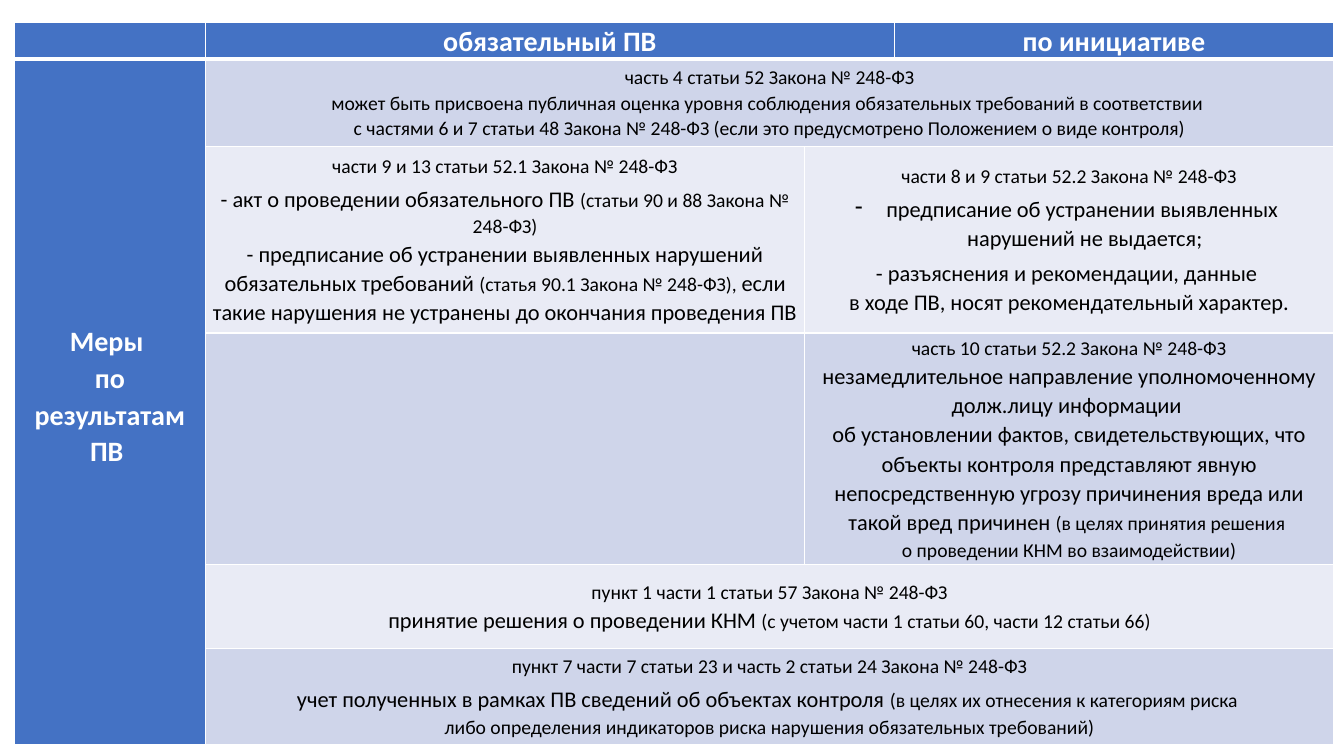
from lxml.etree import SubElement
from pptx import Presentation
from pptx.dml.color import RGBColor
from pptx.enum.text import MSO_ANCHOR, PP_ALIGN
from pptx.oxml.ns import qn
from pptx.util import Inches, Pt

COLORS = {"head": "4472C4", "dark": "CFD5EA", "light": "E9EBF5",
          "white": "FFFFFF", "black": "000000"}
SMALL, BODY, HEADING = 14, 16, 20

# Percent of the slide's width and height
COLUMNS = [14.25, 44.56, 6.68, 32.71]
ROWS = [4.8, 11.6, 24.67, 30.67, 11.07, 12.67]
BANDS = ["head", "dark", "light", "dark", "light", "dark"]


def para(*runs, gap=0, dash=False):
    """Describe a paragraph: (text, size) runs, points above it, dash bullet."""
    return {"runs": runs, "gap": gap, "dash": dash}


# (row, column, rows spanned, columns spanned, paragraphs)
CONTENT = [
    (0, 1, 1, 2, [para(("обязательный ПВ", HEADING))]),
    (0, 3, 1, 1, [para(("по инициативе", HEADING))]),
    (1, 0, 5, 1, [para(("Меры ", HEADING)),
                  para(("по результатам ПВ ", HEADING))]),
    (1, 1, 1, 3, [
        para(("часть 4 статьи 52 Закона № 248-ФЗ", SMALL)),
        para(("может быть присвоена публичная оценка уровня соблюдения "
              "обязательных требований в соответствии ", SMALL)),
        para(("с частями 6 и 7 статьи 48 Закона № 248-ФЗ (если это "
              "предусмотрено Положением о виде контроля)", SMALL))]),
    (2, 1, 1, 1, [
        para(("части 9 и 13 статьи 52.1 Закона № 248-ФЗ", SMALL)),
        para(("- акт о проведении обязательного ПВ ", BODY),
             ("(статьи 90 и 88 Закона № 248-ФЗ)", SMALL), gap=4),
        para(("- предписание об устранении выявленных нарушений "
              "обязательных требований ", BODY),
             ("(статья 90.1 Закона № 248-ФЗ), ", SMALL),
             ("если такие нарушения не устранены до окончания "
              "проведения ПВ", BODY))]),
    (2, 2, 1, 2, [
        para(("части 8 и 9 статьи 52.2 Закона № 248-ФЗ", SMALL)),
        para(("предписание об устранении выявленных \n"
              "нарушений не выдается;", BODY), gap=4, dash=True),
        para(("- разъяснения и рекомендации, данные \n"
              "в ходе ПВ, носят рекомендательный характер.", BODY), gap=4)]),
    (3, 2, 1, 2, [
        para(("часть 10 статьи 52.2 Закона № 248-ФЗ", SMALL)),
        para(("незамедлительное направление уполномоченному долж.лицу "
              "информации \nоб установлении фактов, свидетельствующих, что "
              "объекты контроля представляют явную непосредственную угрозу "
              "причинения вреда или такой вред причинен ", BODY),
             ("(в целях принятия решения \n"
              "о проведении КНМ во взаимодействии)", SMALL))]),
    (4, 1, 1, 3, [
        para(("пункт 1 части 1 статьи 57 Закона № 248-ФЗ", SMALL)),
        para(("принятие решения о проведении КНМ ", BODY),
             ("(с учетом части 1 статьи 60, части 12 статьи 66)", SMALL))]),
    (5, 1, 1, 3, [
        para(("пункт 7 части 7 статьи 23 и часть 2 статьи 24 "
              "Закона № 248-ФЗ", SMALL)),
        para(("учет полученных в рамках ПВ сведений об объектах контроля ",
              BODY),
             ("(в целях их отнесения к категориям риска \nлибо определения "
              "индикаторов риска нарушения обязательных требований)", SMALL),
             gap=4)]),
]


class SlideBuilder:
    def __init__(self, presentation, font):
        self.width = presentation.slide_width
        self.height = presentation.slide_height
        self.font = font
        self.slide = presentation.slides.add_slide(
            presentation.slide_layouts[6])

    def across(self, percent):
        return int(self.width * percent / 100)

    def down(self, percent):
        return int(self.height * percent / 100)

    def table(self, left, top, columns, rows):
        grid = self.slide.shapes.add_table(
            len(rows), len(columns), self.across(left), self.down(top),
            self.across(sum(columns)), self.down(sum(rows))).table
        grid.first_row = grid.horz_banding = False
        for column, share in zip(grid.columns, columns):
            column.width = self.across(share)
        for row, share in zip(grid.rows, rows):
            row.height = self.down(share)
        return grid

    def cell_style(self, cell, fill, top=1, bottom=1):
        """Set margins, white borders (widths in points) and fill."""
        cell.margin_left = cell.margin_right = Inches(0.03)
        cell.margin_top = cell.margin_bottom = 0
        cell.vertical_anchor = MSO_ANCHOR.MIDDLE
        properties = cell._tc.get_or_add_tcPr()
        for side, width in (("L", 1), ("R", 1), ("T", top), ("B", bottom)):
            border = SubElement(properties, qn(f"a:ln{side}"), w=str(Pt(width)))
            solid = SubElement(border, qn("a:solidFill"))
            SubElement(solid, qn("a:srgbClr"), val=COLORS["white"])
        cell.fill.solid()
        cell.fill.fore_color.rgb = RGBColor.from_string(COLORS[fill])

    def run(self, paragraph, text, size, color, bold):
        run = paragraph.add_run()
        run.text = text
        run.font.size = Pt(size)
        run.font.name = self.font
        run.font.bold = bold
        run.font.color.rgb = RGBColor.from_string(COLORS[color])

    def cell_text(self, cell, paragraphs, color, bold):
        frame = cell.text_frame
        for index, item in enumerate(paragraphs):
            paragraph = frame.add_paragraph() if index else frame.paragraphs[0]
            paragraph.alignment = PP_ALIGN.CENTER
            paragraph.line_spacing = 1.07
            paragraph.space_before = Pt(item["gap"])
            if item["dash"]:
                self.dash_bullet(paragraph)
            for text, size in item["runs"]:
                for number, line in enumerate(text.split("\n")):
                    if number:
                        paragraph.add_line_break()
                        SubElement(paragraph._p[-1], qn("a:rPr"),
                                   sz=str(size * 100))
                    self.run(paragraph, line, size, color, bold)

    def dash_bullet(self, paragraph):
        properties = paragraph._p.get_or_add_pPr()
        properties.set("marL", str(Inches(0.31)))
        properties.set("indent", str(-Inches(0.31)))
        SubElement(properties, qn("a:buChar"), char="-")


def main():
    presentation = Presentation()
    presentation.slide_width = Inches(13.33)
    presentation.slide_height = Inches(7.5)
    builder = SlideBuilder(presentation, "Calibri")
    measures = builder.table(1.05, 2.93, COLUMNS, ROWS)

    for row, band in enumerate(BANDS):
        for column in range(len(COLUMNS)):
            builder.cell_style(measures.cell(row, column),
                               band if column else "head",
                               top=3 if row == 1 else 1,
                               bottom=3 if row == 0 else 1)

    for row, column, tall, wide, paragraphs in CONTENT:
        cell = measures.cell(row, column)
        if tall * wide > 1:
            cell.merge(measures.cell(row + tall - 1, column + wide - 1))
        heading = row == 0 or column == 0
        builder.cell_text(cell, paragraphs,
                          "white" if heading else "black", heading)
    measures.cell(1, 0).margin_bottom = Inches(0.11)

    presentation.save("out.pptx")


if __name__ == "__main__":
    main()
